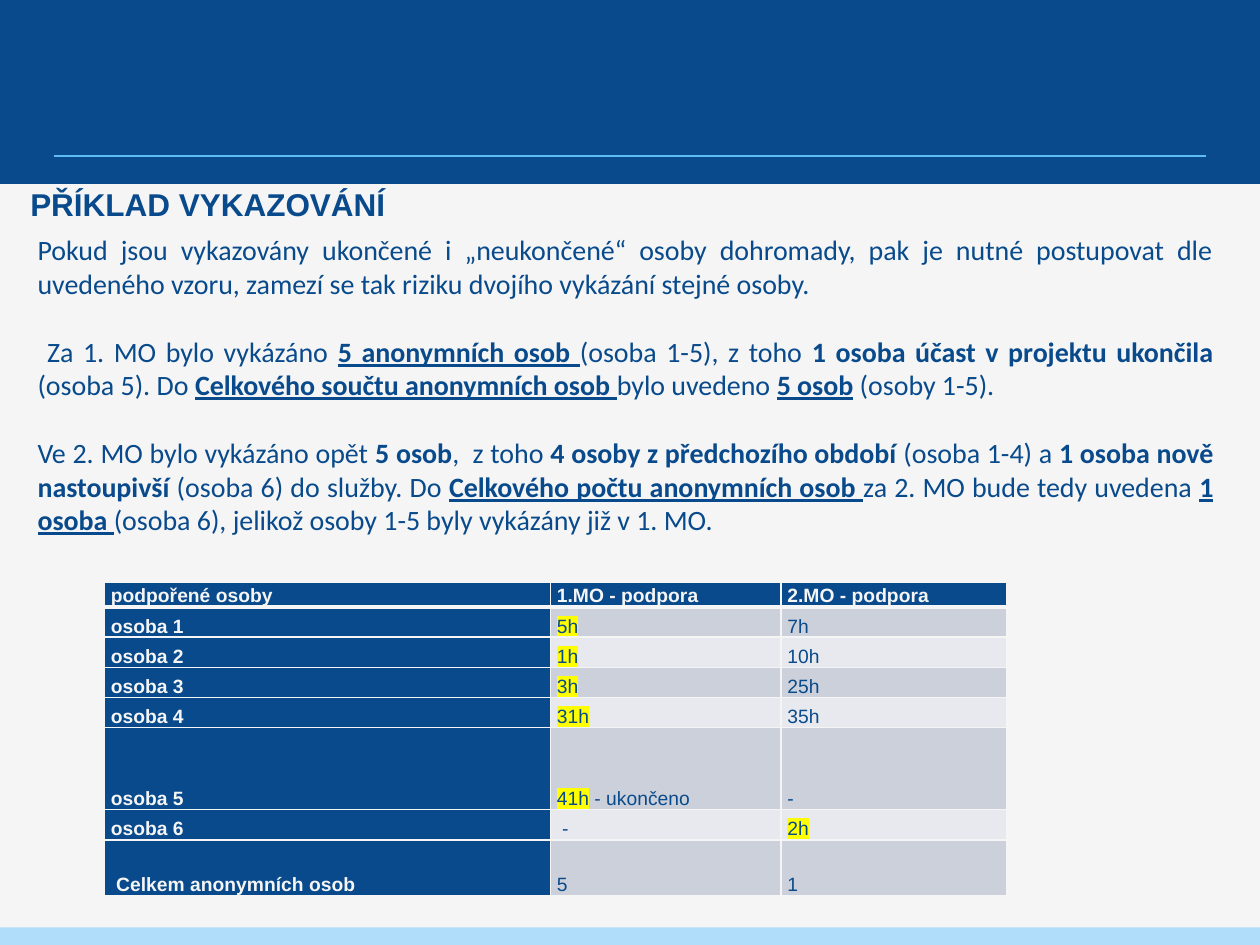
from dataclasses import dataclass

import pptx
import pptx.dml.color
import pptx.enum.shapes
import pptx.enum.text
import pptx.oxml.ns
import pptx.oxml.xmlchemy
import pptx.util
from pptx.util import Inches

NAVY, SKY, PALE_BLUE = "084A8B", "5FBBF5", "AFDDFA"
PAPER, YELLOW = "F5F5F5", "FFFF00"
ROW_BANDS = ("CCD0DA", "E7E9EE")
ALIGN = pptx.enum.text.PP_ALIGN
ANCHOR = pptx.enum.text.MSO_ANCHOR


@dataclass
class Span:
    text: str
    bold: bool = False
    underline: bool = False
    marked: bool = False


@dataclass
class SupportRow:
    label: str
    first: list[Span]
    second: list[Span]
    height: float = 0.24


def rgb(color: str):
    return pptx.dml.color.RGBColor.from_string(color)


def drawing_element(parent, tag: str, **attributes):
    element = pptx.oxml.xmlchemy.OxmlElement(tag)
    for name, value in attributes.items():
        element.set(name, value)
    parent.append(element)
    return element


def add_spans(para, spans: list[Span], size: float, font: str, color: str) -> None:
    for span in spans:
        run = para.add_run()
        run.text = span.text
        run.font.size = pptx.util.Pt(size)
        run.font.bold = span.bold
        run.font.underline = span.underline
        run.font.color.rgb = rgb(color)
        if span.marked:
            properties = run.font._element
            highlight = drawing_element(properties, "a:highlight")
            drawing_element(highlight, "a:srgbClr", val=YELLOW)
            properties.find(pptx.oxml.ns.qn("a:solidFill")).addnext(highlight)
        run.font.name = font


def add_band(page, top: float, height: float, color: str) -> None:
    band = page.shapes.add_shape(
        pptx.enum.shapes.MSO_SHAPE.RECTANGLE,
        0, Inches(top), Inches(10), Inches(height))
    band.shadow.inherit = False
    band.fill.solid()
    band.fill.fore_color.rgb = rgb(color)
    band.line.fill.background()


def fill_cell(cell, spans: list[Span], fill: str, color: str,
              bottom_width: float = 1) -> None:
    properties = cell._tc.get_or_add_tcPr()
    for side in "LRTB":
        width = bottom_width if side == "B" else 1
        border = drawing_element(properties, f"a:ln{side}",
                                 w=str(int(pptx.util.Pt(width))))
        solid = drawing_element(border, "a:solidFill")
        drawing_element(solid, "a:srgbClr", val=PAPER)
    cell.fill.solid()
    cell.fill.fore_color.rgb = rgb(fill)
    cell.vertical_anchor = ANCHOR.BOTTOM
    cell.margin_left = cell.margin_right = Inches(0.05)
    cell.margin_top = cell.margin_bottom = 0
    para = cell.text_frame.paragraphs[0]
    para.alignment = ALIGN.JUSTIFY
    para.line_spacing = 1.07
    add_spans(para, spans, 11, "Arial", color)


def add_support_table(page, headers: list[str], rows: list[SupportRow]) -> None:
    table = page.shapes.add_table(
        len(rows) + 1, len(headers),
        Inches(0.83), Inches(4.62), Inches(7.17), Inches(2.5)).table
    for column, width in zip(table.columns, (3.54, 1.83, 1.79)):
        column.width = Inches(width)
    table.rows[0].height = Inches(0.06)
    for index, header in enumerate(headers):
        fill_cell(table.cell(0, index), [Span(header, bold=True)], NAVY, PAPER, 3)
    for index, row in enumerate(rows, start=1):
        table.rows[index].height = Inches(row.height)
        fill_cell(table.cell(index, 0), [Span(row.label, bold=True)], NAVY, PAPER)
        for column, spans in enumerate((row.first, row.second), start=1):
            fill_cell(table.cell(index, column), spans,
                      ROW_BANDS[(index - 1) % 2], NAVY)


PARAGRAPHS = [
    [Span("Pokud jsou vykazovány ukončené i „neukončené“ osoby dohromady, pak je "
          "nutné postupovat dle uvedeného vzoru, zamezí se tak riziku dvojího "
          "vykázání stejné osoby.")],
    [Span(" Za 1. MO bylo vykázáno "),
     Span("5 anonymních osob ", bold=True, underline=True),
     Span("(osoba 1-5), z toho "),
     Span("1 osoba účast v projektu ukončila ", bold=True),
     Span("(osoba 5). Do "),
     Span("Celkového součtu anonymních osob ", bold=True, underline=True),
     Span("bylo uvedeno "),
     Span("5 osob", bold=True, underline=True),
     Span(" (osoby 1-5). ")],
    [Span("Ve 2. MO bylo vykázáno opět "),
     Span("5 osob", bold=True),
     Span(",  z toho "),
     Span("4 osoby z předchozího období ", bold=True),
     Span("(osoba 1-4) a "),
     Span("1 osoba nově nastoupivší ", bold=True),
     Span("(osoba 6) do služby. Do "),
     Span("Celkového počtu anonymních osob ", bold=True, underline=True),
     Span("za 2. MO bude tedy uvedena "),
     Span("1 osoba ", bold=True, underline=True),
     Span("(osoba 6), jelikož osoby 1-5 byly vykázány již v 1. MO.")],
]

SUPPORT_ROWS = [
    SupportRow("osoba 1 ", [Span("5h", marked=True)], [Span("7h")]),
    SupportRow("osoba 2", [Span("1h", marked=True)], [Span("10h")]),
    SupportRow("osoba 3", [Span("3h", marked=True)], [Span("25h")]),
    SupportRow("osoba 4", [Span("31h", marked=True)], [Span("35h")]),
    SupportRow("osoba 5", [Span("41h", marked=True), Span(" - ukončeno")],
               [Span("-")], 0.65),
    SupportRow("osoba 6", [Span(" -")], [Span("2h", marked=True)]),
    SupportRow(" Celkem anonymních osob", [Span("5")], [Span("1")], 0.44),
]


def main() -> None:
    deck = pptx.Presentation()
    deck.slide_width, deck.slide_height = Inches(10), Inches(7.5)
    page = deck.slides.add_slide(deck.slide_layouts[5])
    page.background.fill.solid()
    page.background.fill.fore_color.rgb = rgb(PAPER)

    # Header and footer bands
    add_band(page, 0, 1.46, NAVY)
    add_band(page, 7.36, 0.14, PALE_BLUE)
    rule = page.shapes.add_connector(
        pptx.enum.shapes.MSO_CONNECTOR.STRAIGHT,
        Inches(0.43), Inches(1.24), Inches(9.57), Inches(1.24))
    rule.line.color.rgb = rgb(SKY)
    rule.line.width = pptx.util.Pt(1)
    drawing_element(rule._element.spPr, "a:effectLst")

    # Title
    title = page.shapes.title
    title.left, title.top = Inches(0.2), Inches(1.47)
    title.width, title.height = Inches(9.69), Inches(0.35)
    frame = title.text_frame
    frame.vertical_anchor = ANCHOR.TOP
    frame.margin_left = frame.margin_right = Inches(0.04)
    frame.margin_top = frame.margin_bottom = 0
    frame.paragraphs[0].alignment = ALIGN.LEFT
    add_spans(frame.paragraphs[0], [Span("PŘÍKLAD VYKAZOVÁNÍ", bold=True)],
              18, "Arial", NAVY)

    # Explanation, with one line of space between paragraphs
    box = page.shapes.add_textbox(Inches(0.2), Inches(1.8), Inches(9.53), Inches(2.51))
    box.text_frame.word_wrap = True
    for index, spans in enumerate(PARAGRAPHS):
        para = box.text_frame.add_paragraph() if index else box.text_frame.paragraphs[0]
        para.alignment = ALIGN.JUSTIFY
        if index:
            para.space_before = pptx.util.Pt(19.5)
        add_spans(para, spans, 16, "Calibri", NAVY)

    # Support by person
    add_support_table(page, ["podpořené osoby", "1.MO - podpora", "2.MO - podpora"],
                      SUPPORT_ROWS)
    deck.save("out.pptx")


if __name__ == "__main__":
    main()
